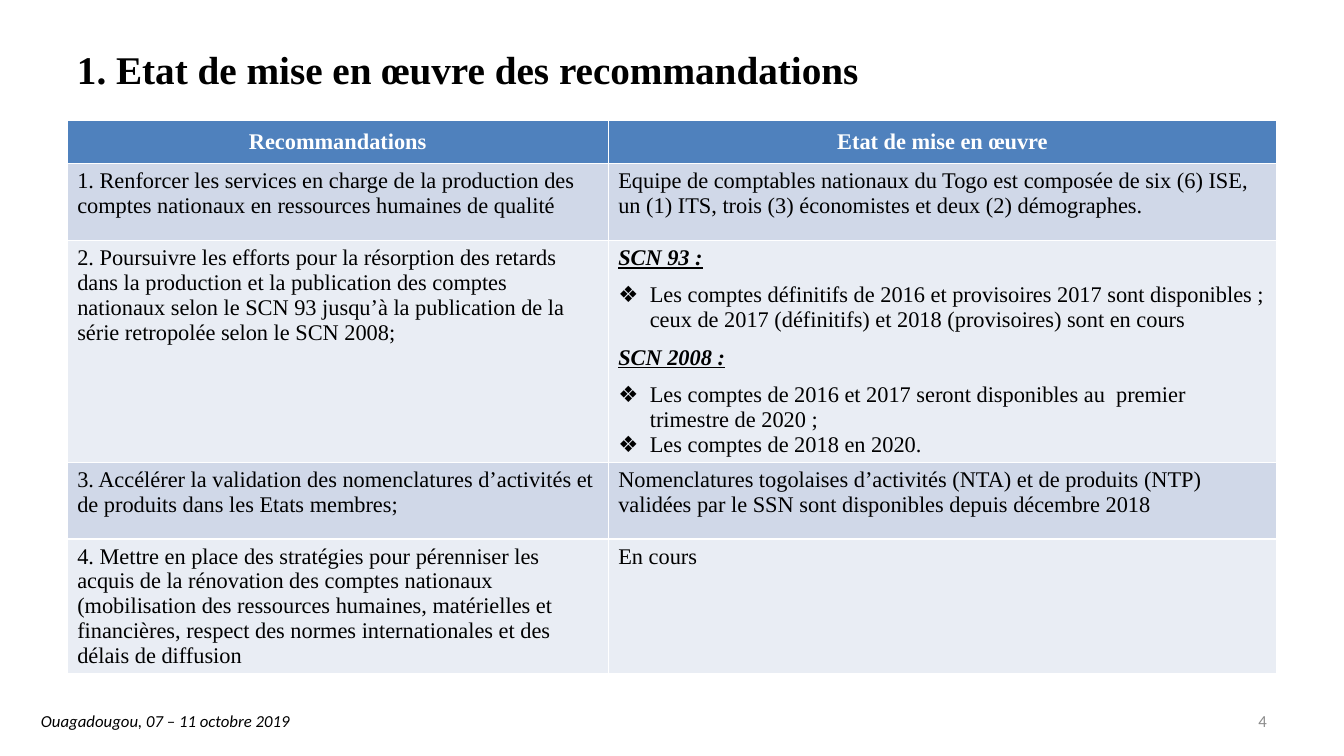
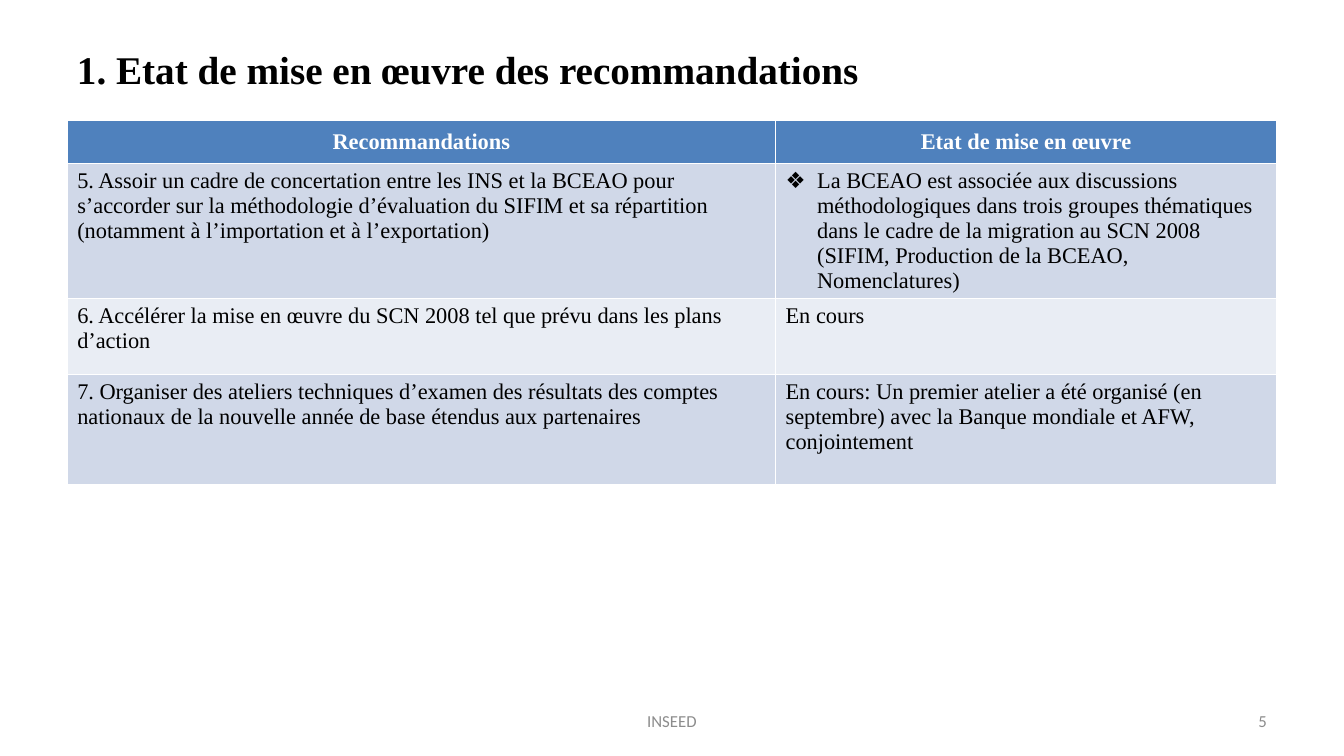
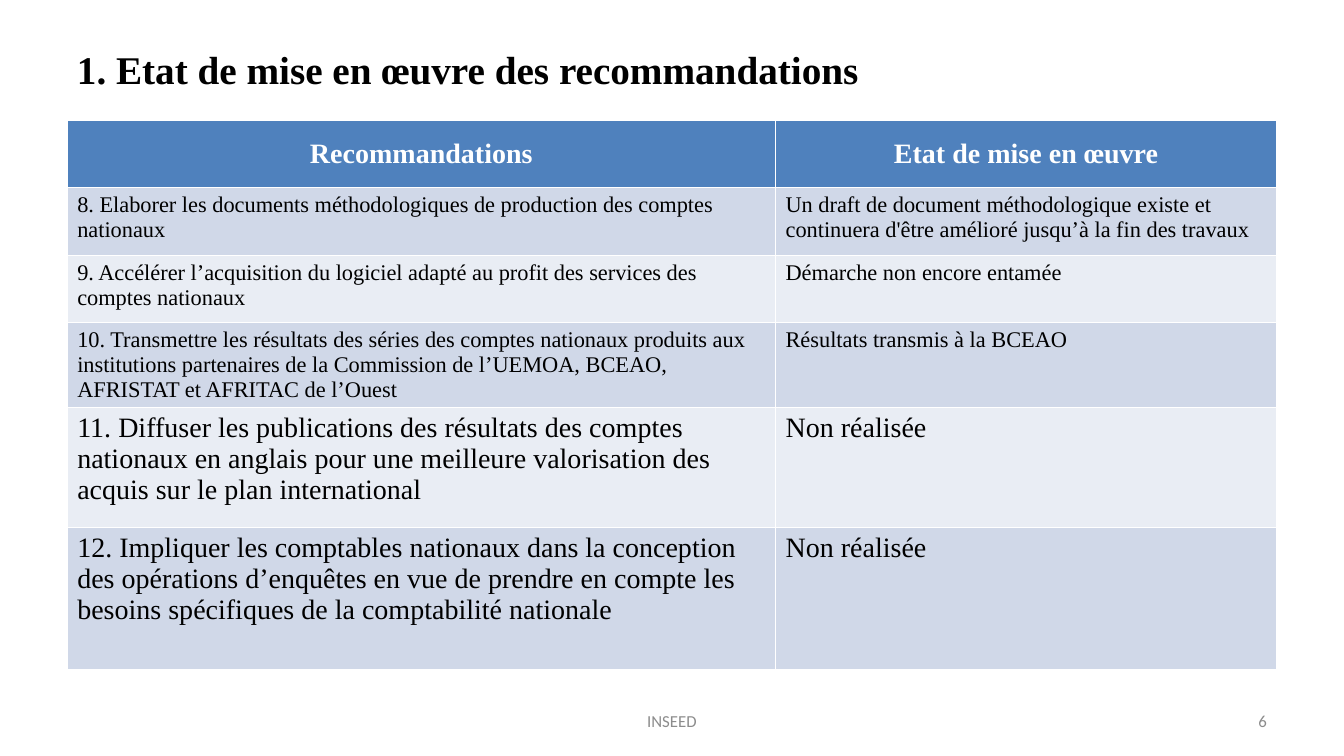
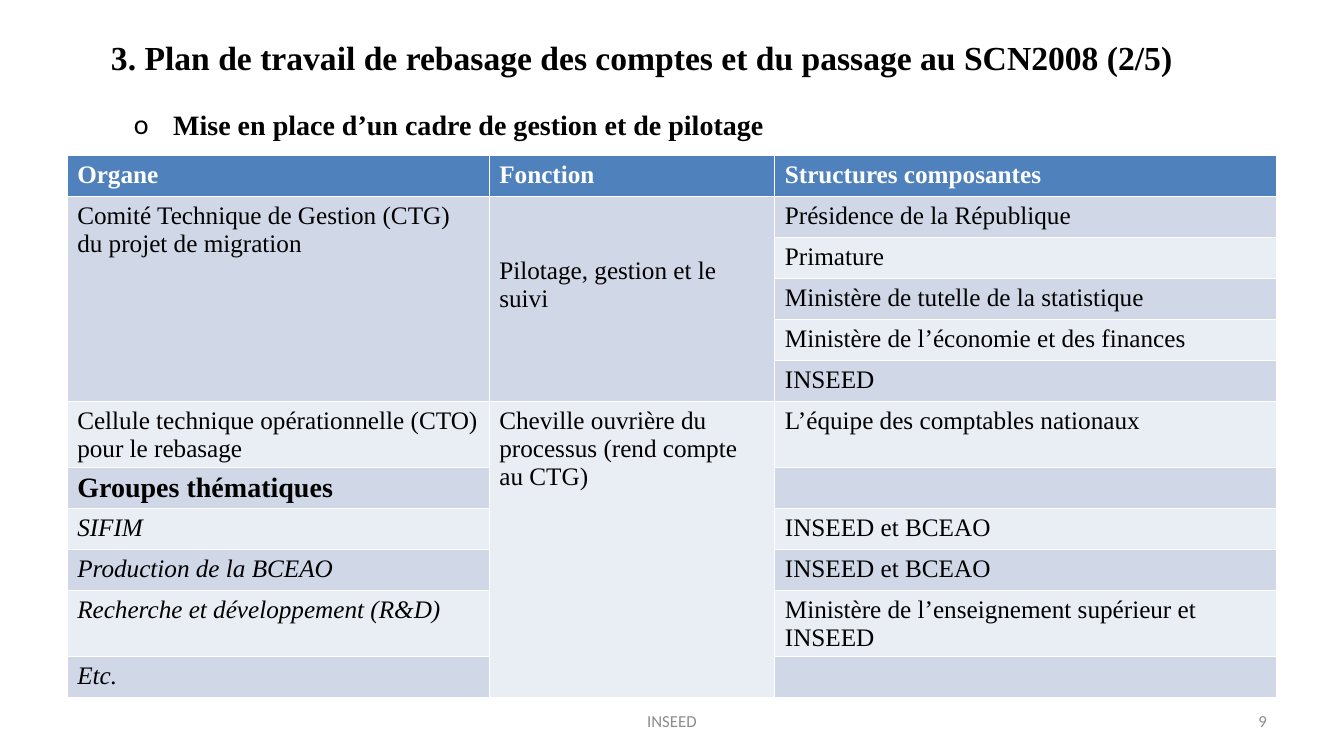
from dataclasses import dataclass, field

from lxml import etree
from pptx import Presentation
from pptx.dml import color
from pptx.enum import text as t
from pptx.oxml import ns
from pptx.util import Pt

COLORS = {
    "text": "000000",
    "header": "4F81BD",
    "header_text": "FFFFFF",
    "band_dark": "D0D8E8",
    "band_light": "E9EDF4",
    "footer": "8C8C8C",
}
SERIF, SANS = "Times New Roman", "Calibri"
LEFT, CENTER, RIGHT = t.PP_ALIGN.LEFT, t.PP_ALIGN.CENTER, t.PP_ALIGN.RIGHT
TABLE_LEFT = 48
TITLE_ONLY, TITLE_AND_BODY = 5, 1


@dataclass
class Line:
    text: str
    size: float = 0  # 0 takes the size of the table
    bold: bool = False
    italic: bool = False
    underline: bool = False
    bullet: str = ""
    before: float = 0


@dataclass
class Grid:
    top: float
    widths: list[float]
    heights: list[float]
    rows: list[list[str | Line | list[Line]]]
    size: float = 16
    header_size: float = 16
    header_align: t.PP_ALIGN = CENTER
    header_anchor: t.MSO_ANCHOR = t.MSO_ANCHOR.MIDDLE
    merges: list[tuple[int, int, int]] = field(default_factory=list)  # column, first row, last row


@dataclass
class Heading:
    text: str
    left: float = 48
    top: float = 21.6
    height: float = 55.4
    size: float = 28
    align: t.PP_ALIGN = LEFT


@dataclass
class Page:
    number: str
    heading: Heading
    grid: Grid
    footer: str = "INSEED"
    date: str = ""
    subtitle: str = ""


# Shared text formatting
def rgb(name: str) -> color.RGBColor:
    return color.RGBColor.from_string(COLORS[name])


def place(shape, left: float, top: float, width: float, height: float) -> None:
    shape.left, shape.top, shape.width, shape.height = map(Pt, (left, top, width, height))


def set_bullet(paragraph, char: str, indent: float) -> None:
    props = paragraph._p.get_or_add_pPr()
    props.set("marL", str(Pt(indent)))
    props.set("indent", str(-Pt(indent)))
    etree.SubElement(props, ns.qn("a:buFont")).set("typeface", SANS)
    etree.SubElement(props, ns.qn("a:buChar")).set("char", char)


def write(paragraph, line: Line, size: float, ink: str = "text", font: str = SERIF,
          align: t.PP_ALIGN = LEFT, indent: float = 22.5) -> None:
    paragraph.text = line.text
    paragraph.alignment = align
    paragraph.space_before = Pt(line.before)
    if line.bullet:
        set_bullet(paragraph, line.bullet, indent)
    for run in paragraph.runs:
        run.font.name, run.font.size = font, Pt(line.size or size)
        run.font.bold, run.font.italic = line.bold, line.italic
        run.font.underline = line.underline
        run.font.color.rgb = rgb(ink)


# Slide parts
def add_heading(slide, heading: Heading) -> None:
    title = slide.shapes.title
    place(title, heading.left - 0.2, heading.top, 864, heading.height)
    frame = title.text_frame
    frame.auto_size, frame.vertical_anchor = t.MSO_AUTO_SIZE.NONE, t.MSO_ANCHOR.MIDDLE
    write(frame.paragraphs[0], Line(heading.text, bold=True), heading.size, align=heading.align)


def add_subtitle(slide, subtitle: str) -> None:
    body = slide.placeholders[1]
    place(body, 88.5, 73.5, 584, 32)
    body.text_frame.auto_size = t.MSO_AUTO_SIZE.NONE
    write(body.text_frame.paragraphs[0], Line(subtitle, bold=True, bullet="o"), 20, indent=28)


def add_note(slide, note: str, left: float, top: float, width: float, height: float,
             align: t.PP_ALIGN, ink: str = "footer", italic: bool = False) -> None:
    box = slide.shapes.add_textbox(*map(Pt, (left, top, width, height)))
    box.text_frame.word_wrap = not italic
    box.text_frame.vertical_anchor = t.MSO_ANCHOR.MIDDLE
    write(box.text_frame.paragraphs[0], Line(note, italic=italic), 12, ink, SANS, align)


def fill_cell(cell, content: str | Line | list[Line], row: int, grid: Grid) -> None:
    header = row == 0
    cell.fill.solid()
    cell.fill.fore_color.rgb = rgb("header" if header else "band_dark" if row % 2 else "band_light")
    if header:
        cell.vertical_anchor = grid.header_anchor
    lines = content if isinstance(content, list) else [content]
    for index, entry in enumerate(lines):
        line = entry if isinstance(entry, Line) else Line(entry, bold=header)
        frame = cell.text_frame
        paragraph = frame.add_paragraph() if index else frame.paragraphs[0]
        if header:
            write(paragraph, line, grid.header_size, "header_text", align=grid.header_align)
        else:
            write(paragraph, line, grid.size)


def add_grid(slide, grid: Grid):
    table = slide.shapes.add_table(
        len(grid.heights), len(grid.widths), Pt(TABLE_LEFT), Pt(grid.top),
        Pt(sum(grid.widths)), Pt(sum(grid.heights))).table
    for column, width in zip(table.columns, grid.widths):
        column.width = Pt(width)
    for row, height in zip(table.rows, grid.heights):
        row.height = Pt(height)
    for row, contents in enumerate(grid.rows):
        for column, content in enumerate(contents):
            fill_cell(table.cell(row, column), content, row, grid)
    for column, first, last in grid.merges:
        table.cell(first, column).merge(table.cell(last, column))
    return table


def add_page(deck, page: Page):
    layout = TITLE_AND_BODY if page.subtitle else TITLE_ONLY
    slide = deck.slides.add_slide(deck.slide_layouts[layout])
    add_heading(slide, page.heading)
    table = add_grid(slide, page.grid)
    if page.subtitle:
        add_subtitle(slide, page.subtitle)
    if page.footer:
        add_note(slide, page.footer, 328, 500.5, 304, 28.8, CENTER)
    add_note(slide, page.number, 688, 500.5, 224, 28.8, RIGHT)
    if page.date:
        add_note(slide, page.date, 21, 504, 194.5, 21.6, CENTER, "text", True)
    return table


# Content
STATUS = Heading("1. Etat de mise en œuvre des recommandations")
STATUS_HEADER = ["Recommandations", "Etat de mise en œuvre"]
STATUS_TOP = 86
WIDE_LEFT = [506, 358]


def system(name: str, before: float = 0) -> Line:
    return Line(name, bold=True, italic=True, underline=True, before=before)


def diamond(text: str, before: float = 0) -> Line:
    return Line(text, bullet="❖", before=before)


first_recommendations = Grid(STATUS_TOP, [386.5, 477.5], [31, 54.7, 158, 54.7, 96], [
    STATUS_HEADER,
    ["1. Renforcer les services en charge de la production des comptes nationaux en ressources "
     "humaines de qualité",
     "Equipe de comptables nationaux du Togo est composée de six (6) ISE, un (1) ITS, trois (3) "
     "économistes et deux (2) démographes."],
    ["2. Poursuivre les efforts pour la résorption des retards dans la production et la "
     "publication des comptes nationaux selon le SCN 93 jusqu’à la publication de la série "
     "retropolée selon le SCN 2008;",
     [system("SCN 93 :"),
      diamond("Les comptes définitifs de 2016 et provisoires 2017 sont disponibles ; ceux de "
              "2017 (définitifs) et 2018 (provisoires) sont en cours", 9),
      system("SCN 2008 :", 9),
      diamond("Les comptes de 2016 et 2017 seront disponibles au  premier trimestre de 2020 ;", 9),
      diamond("Les comptes de 2018 en 2020.")]],
    ["3. Accélérer la validation des nomenclatures d’activités et de produits dans les Etats "
     "membres;",
     "Nomenclatures togolaises d’activités (NTA) et de produits (NTP) validées par le SSN sont "
     "disponibles depuis décembre 2018"],
    ["4. Mettre en place des stratégies pour pérenniser les acquis de la rénovation des comptes "
     "nationaux (mobilisation des ressources humaines, matérielles et financières, respect des "
     "normes internationales et des délais de diffusion",
     "En cours"],
])

middle_recommendations = Grid(STATUS_TOP, WIDE_LEFT, [31, 96, 54.7, 78.5], [
    STATUS_HEADER,
    ["5. Assoir un cadre de concertation entre les INS et la BCEAO pour s’accorder sur la "
     "méthodologie d’évaluation du SIFIM et sa répartition (notamment à l’importation et à "
     "l’exportation)",
     diamond("La BCEAO est associée aux discussions méthodologiques dans trois groupes "
             "thématiques dans le cadre de la migration au SCN 2008 (SIFIM, Production de la "
             "BCEAO, Nomenclatures)")],
    ["6. Accélérer la mise en œuvre du SCN 2008 tel que prévu dans les plans d’action",
     "En cours"],
    ["7. Organiser des ateliers techniques d’examen des résultats des comptes nationaux de la "
     "nouvelle année de base étendus aux partenaires",
     "En cours: Un premier atelier a été organisé (en septembre) avec la Banque mondiale et "
     "AFW, conjointement"],
])

last_recommendations = Grid(STATUS_TOP, WIDE_LEFT, [48.2, 48.2, 48.2, 60.7, 85.5, 101.5], [
    STATUS_HEADER,
    ["8. Elaborer les documents méthodologiques de production des comptes nationaux",
     "Un draft de document méthodologique existe et continuera d'être amélioré jusqu’à la fin "
     "des travaux"],
    ["9. Accélérer l’acquisition du logiciel adapté au profit des services des comptes "
     "nationaux",
     "Démarche non encore entamée"],
    ["10. Transmettre les résultats des séries des comptes nationaux produits aux institutions "
     "partenaires de la Commission de l’UEMOA, BCEAO, AFRISTAT et AFRITAC de l’Ouest",
     "Résultats transmis à la BCEAO"],
    [Line("11. Diffuser les publications des résultats des comptes nationaux en anglais pour une "
          "meilleure valorisation des acquis sur le plan international", 20),
     Line("Non réalisée", 20)],
    [Line("12. Impliquer les comptables nationaux dans la conception des opérations d’enquêtes en "
          "vue de prendre en compte les besoins spécifiques de la comptabilité nationale", 20),
     Line("Non réalisée", 20)],
], header_size=20)

governance = Grid(
    111.3, [301.5, 204, 358.5], [29.3] * 6 + [46.6] + [29.3] * 3 + [46.6, 29.3], [
        ["Organe", "Fonction", "Structures composantes"],
        ["Comité Technique de Gestion (CTG) du projet de migration",
         "Pilotage, gestion et le suivi", "Présidence de la République"],
        ["", "", "Primature"],
        ["", "", "Ministère de tutelle de la statistique"],
        ["", "", "Ministère de l’économie et des finances"],
        ["", "", "INSEED"],
        ["Cellule technique opérationnelle (CTO) pour le rebasage",
         "Cheville ouvrière du processus (rend compte au CTG)",
         "L’équipe des comptables nationaux"],
        [Line("Groupes thématiques", 20, bold=True), "", ""],
        [Line("SIFIM", italic=True), "", "INSEED et BCEAO"],
        [Line("Production de la BCEAO", italic=True), "", "INSEED et BCEAO"],
        [Line("Recherche et développement (R&D)", italic=True), "",
         "Ministère de l’enseignement supérieur et INSEED"],
        [Line("Etc.", italic=True), "", ""],
    ], size=18, header_size=18, header_align=LEFT, header_anchor=t.MSO_ANCHOR.TOP,
    merges=[(0, 1, 5), (1, 1, 5), (1, 6, 11)])

PLAN = Heading("3. Plan de travail de rebasage des comptes et du passage au SCN2008 (2/5)",
               left=26.6, top=16, height=50, size=24, align=CENTER)


def main() -> None:
    deck = Presentation()
    deck.slide_width, deck.slide_height = Pt(960), Pt(540)
    add_page(deck, Page("4", STATUS, first_recommendations, footer="",
                        date="Ouagadougou, 07 – 11 octobre 2019"))
    add_page(deck, Page("5", STATUS, middle_recommendations))
    add_page(deck, Page("6", STATUS, last_recommendations))
    organs = add_page(deck, Page("9", PLAN, governance,
                                 subtitle="Mise en place d’un cadre de gestion et de pilotage"))
    # The steering role sits two lines below the top of its merged cell
    organs.cell(1, 1).margin_top = Pt(43)
    deck.save("out.pptx")


if __name__ == "__main__":
    main()
